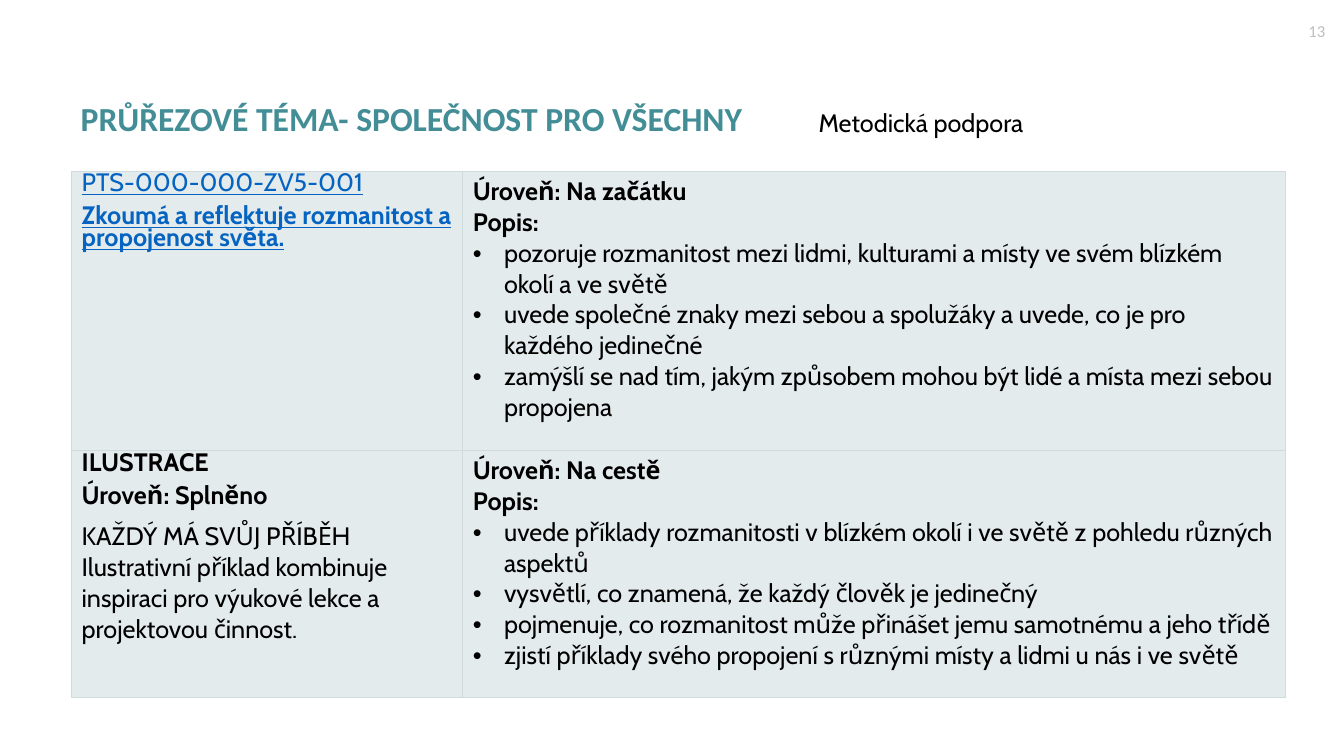
from dataclasses import dataclass

from lxml.etree import SubElement
from pptx import Presentation
from pptx.dml.color import RGBColor
from pptx.enum.text import MSO_ANCHOR as Anchor, PP_ALIGN as Align
from pptx.oxml.ns import qn
from pptx.util import Inches, Pt


@dataclass(frozen=True)
class Theme:
    heading_font: str = "Calibri"
    body_font: str = "Cabin"
    heading_color: str = "428D96"
    number_color: str = "BFBFBF"
    text_color: str = "000000"
    link_color: str = "0563C1"
    cell_fill: str = "E4EBEC"
    border_color: str = "CFDBDD"
    border_width: float = 0.5
    heading_size: int = 24
    body_size: int = 18
    number_size: int = 12
    tight_line: float = 15.6
    tight_after: int = 8
    bullet_indent: float = 0.31


@dataclass(frozen=True)
class Line:
    """One paragraph of a table cell."""
    text: str
    bold: bool = False
    link: bool = False
    tight: bool = False
    bullet: bool = False


def level(name, points):
    return [Line(f"Úroveň: {name}", bold=True), Line("Popis:", bold=True),
            *(Line(point, bullet=True) for point in points)]


OUTCOME = [
    Line("PTS-000-000-ZV5-001", link=True, tight=True),
    Line("Zkoumá a reflektuje rozmanitost a propojenost světa.",
         bold=True, link=True, tight=True),
]
BEGINNING = level("Na začátku", [
    "pozoruje rozmanitost mezi lidmi, kulturami a místy ve svém blízkém okolí a ve světě",
    "uvede společné znaky mezi sebou a spolužáky a uvede, co je pro každého jedinečné",
    "zamýšlí se nad tím, jakým způsobem mohou být lidé a místa mezi sebou propojena",
])
ILLUSTRATION = [
    Line("ILUSTRACE", bold=True, tight=True),
    Line("Úroveň: Splněno", bold=True, tight=True),
    Line("KAŽDÝ MÁ SVŮJ PŘÍBĚH"),
    Line("Ilustrativní příklad kombinuje inspiraci pro výukové lekce a projektovou činnost."),
]
ON_THE_WAY = level("Na cestě", [
    "uvede příklady rozmanitosti v blízkém okolí i ve světě z pohledu různých aspektů",
    "vysvětlí, co znamená, že každý člověk je jedinečný",
    "pojmenuje, co rozmanitost může přinášet jemu samotnému a jeho třídě",
    "zjistí příklady svého propojení s různými místy a lidmi u nás i ve světě",
])


class SlideBuilder:
    def __init__(self, slide, theme):
        self.slide = slide
        self.theme = theme

    def style(self, paragraph, font_name, size, color, bold=False, underline=False):
        font = paragraph.font
        font.name, font.size = font_name, Pt(size)
        font.bold, font.underline = bold, underline
        font.color.rgb = RGBColor.from_string(color)

    def title(self, text, box):
        heading = self.slide.shapes.title
        heading.left, heading.top, heading.width, heading.height = map(Inches, box)
        frame = heading.text_frame
        frame.text = text
        frame.vertical_anchor = Anchor.TOP
        frame.margin_left = frame.margin_right = frame.margin_top = frame.margin_bottom = 0
        paragraph = frame.paragraphs[0]
        paragraph.alignment = Align.LEFT
        paragraph.line_spacing = 0.9
        theme = self.theme
        self.style(paragraph, theme.heading_font, theme.heading_size,
                   theme.heading_color, bold=True)

    def label(self, text, box, font_name, size, color,
              align=Align.LEFT, anchor=Anchor.TOP, wrap=False):
        frame = self.slide.shapes.add_textbox(*map(Inches, box)).text_frame
        frame.text = text
        frame.word_wrap = wrap
        frame.vertical_anchor = anchor
        frame.paragraphs[0].alignment = align
        self.style(frame.paragraphs[0], font_name, size, color)

    def table(self, rows, left, top, widths, heights):
        table = self.slide.shapes.add_table(
            len(heights), len(widths), Inches(left), Inches(top),
            Inches(sum(widths)), Inches(sum(heights))).table
        table.first_row = table.horz_banding = False
        for column, width in zip(table.columns, widths):
            column.width = Inches(width)
        for row, height, contents in zip(table.rows, heights, rows):
            row.height = Inches(height)
            for cell, lines in zip(row.cells, contents):
                self.fill_cell(cell, lines)

    def fill_cell(self, cell, lines):
        self.borders(cell)
        cell.fill.solid()
        cell.fill.fore_color.rgb = RGBColor.from_string(self.theme.cell_fill)
        frame = cell.text_frame
        frame.text = "\n".join(line.text for line in lines)
        for paragraph, line in zip(frame.paragraphs, lines):
            self.format_line(paragraph, line)

    def format_line(self, paragraph, line):
        theme = self.theme
        if line.tight:
            paragraph.line_spacing = Pt(theme.tight_line)
            paragraph.space_after = Pt(theme.tight_after)
        if line.bullet:
            indent = Inches(theme.bullet_indent)
            properties = paragraph._p.get_or_add_pPr()
            properties.set("marL", str(indent))
            properties.set("indent", str(-indent))
            SubElement(properties, qn("a:buFont")).set("typeface", "Arial")
            SubElement(properties, qn("a:buChar")).set("char", "•")
        self.style(paragraph, theme.body_font, theme.body_size,
                   theme.link_color if line.link else theme.text_color,
                   line.bold, line.link)

    def borders(self, cell):
        properties = cell._tc.get_or_add_tcPr()
        for side in ("lnL", "lnR", "lnT", "lnB"):
            edge = SubElement(properties, qn(f"a:{side}"))
            edge.set("w", str(Pt(self.theme.border_width)))
            fill = SubElement(edge, qn("a:solidFill"))
            SubElement(fill, qn("a:srgbClr")).set("val", self.theme.border_color)


def main():
    prs = Presentation()
    prs.slide_width, prs.slide_height = Inches(13.33), Inches(7.5)
    title_only = prs.slide_layouts[5]
    theme = Theme()
    builder = SlideBuilder(prs.slides.add_slide(title_only), theme)

    builder.title("PRŮŘEZOVÉ TÉMA- SPOLEČNOST PRO VŠECHNY", (0.8, 1.02, 11.85, 0.68))
    builder.label("13", (12.79, 0.11, 0.54, 0.4), theme.heading_font, theme.number_size,
                  theme.number_color, Align.CENTER, Anchor.MIDDLE, wrap=True)
    builder.table([(OUTCOME, BEGINNING), (ILLUSTRATION, ON_THE_WAY)],
                  0.71, 1.7, widths=(3.88, 8.16), heights=(2.77, 2.45))
    builder.label("Metodická podpora", (8.02, 1.02, 2.31, 0.4),
                  theme.body_font, theme.body_size, theme.text_color)
    prs.save("out.pptx")


if __name__ == "__main__":
    main()
